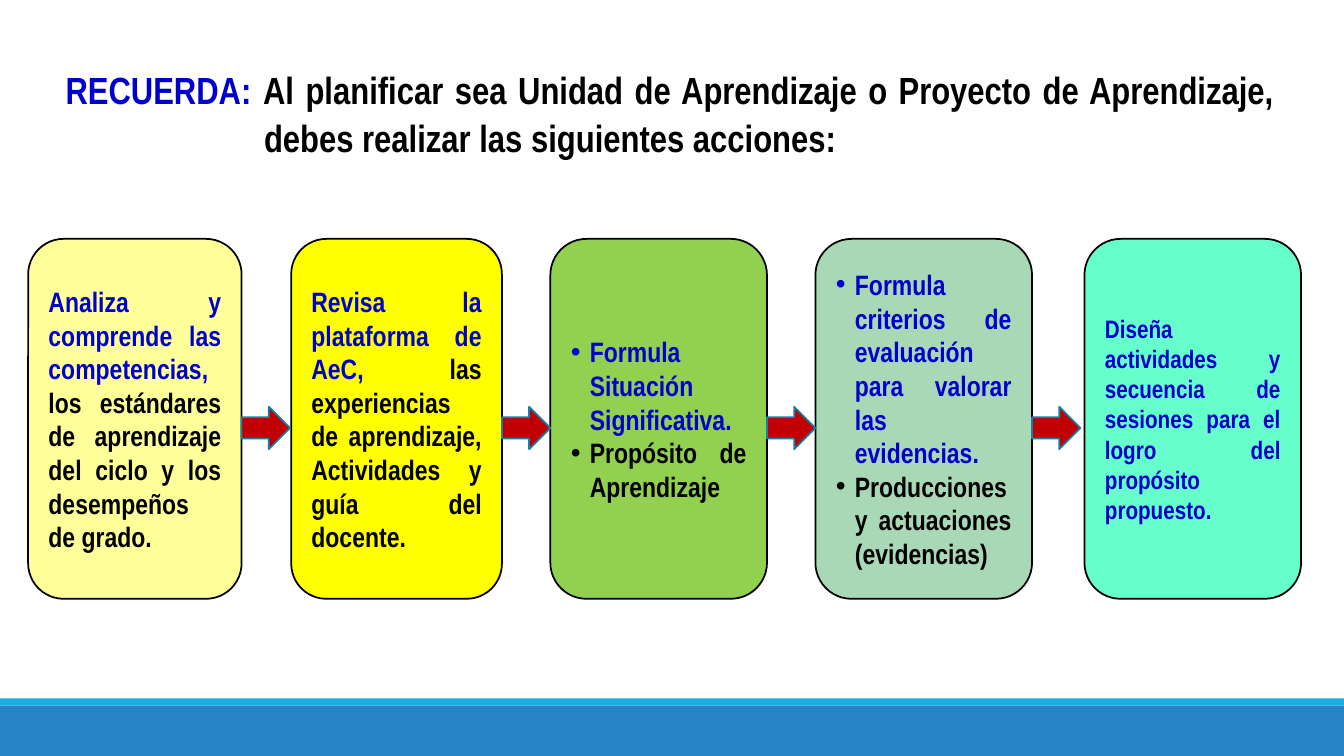
"""Build a slide with the five steps for planning a learning unit or project."""
from lxml import etree
from pptx import Presentation
from pptx.dml.color import RGBColor
from pptx.enum.shapes import MSO_SHAPE
from pptx.enum.text import MSO_ANCHOR, MSO_AUTO_SIZE, PP_ALIGN
from pptx.oxml.ns import qn
from pptx.util import Cm, Pt

RECTANGLE = MSO_SHAPE.RECTANGLE
ROUNDED = MSO_SHAPE.ROUNDED_RECTANGLE
ARROW = MSO_SHAPE.RIGHT_ARROW
TOP, MIDDLE = MSO_ANCHOR.TOP, MSO_ANCHOR.MIDDLE
JUSTIFY = PP_ALIGN.JUSTIFY
NO_AUTOFIT = MSO_AUTO_SIZE.NONE

BLACK = RGBColor(0x00, 0x00, 0x00)
WHITE = RGBColor(0xFF, 0xFF, 0xFF)
BLUE = RGBColor(0x00, 0x00, 0xCC)
RED = RGBColor(0xC0, 0x00, 0x00)
ARROW_EDGE = RGBColor(0x15, 0x80, 0xA9)
FOOTER_BLUE = RGBColor(0x26, 0x83, 0xC6)
FOOTER_CYAN = RGBColor(0x1C, 0xAD, 0xE4)
CREAM = RGBColor(0xFF, 0xFF, 0x99)
YELLOW = RGBColor(0xFF, 0xFF, 0x00)
GREEN = RGBColor(0x92, 0xD0, 0x50)
SAGE = RGBColor(0xA9, 0xD8, 0xB7)
MINT = RGBColor(0x66, 0xFF, 0xCC)

FONT = "Arial Narrow"
SLIDE_WIDTH, SLIDE_HEIGHT = 33.87, 19.05
STEP_TOP, STEP_HEIGHT = 6.02, 9.07
ARROW_TOP, ARROW_WIDTH, ARROW_HEIGHT = 10.25, 1.22, 1.07

TITLE = [
    ("RECUERDA: ", BLUE),
    ("Al planificar sea Unidad de Aprendizaje o Proyecto de Aprendizaje, "
     "debes realizar las siguientes acciones:", BLACK),
]
FOOTER_BARS = [(17.78, 1.27, FOOTER_BLUE), (17.6, 0.18, FOOTER_CYAN)]
STEPS = [
    (0.71, 5.38, CREAM, 20, False, [
        [("Analiza y comprende las competencias,", BLUE),
         (" los estándares de aprendizaje del ciclo y los desempeños de grado.", BLACK)]]),
    (7.34, 5.31, YELLOW, 20, False, [
        [("Revisa la plataforma de AeC, ", BLUE),
         ("las experiencias de aprendizaje, Actividades y guía del docente.", BLACK)]]),
    (13.87, 5.46, GREEN, 20, True, [
        [("Formula Situación Significativa.", BLUE)],
        [("Propósito de Aprendizaje", BLACK)]]),
    (20.55, 5.46, SAGE, 20, True, [
        [("Formula criterios de evaluación para valorar las evidencias.", BLUE)],
        [("Producciones y actuaciones (evidencias)", BLACK)]]),
    (27.33, 5.46, MINT, 18, False, [
        [("Diseña actividades y secuencia de sesiones para el logro "
          "del propósito propuesto.", BLUE)]]),
]


def add_block(page, kind, left, top, width, height, fill, edge=None):
    """Add a filled shape, outlined when an edge colour is given."""
    block = page.shapes.add_shape(kind, Cm(left), Cm(top), Cm(width), Cm(height))
    block.shadow.inherit = False
    block.fill.solid()
    block.fill.fore_color.rgb = fill
    if edge is None:
        block.line.fill.background()
    else:
        block.line.color.rgb = edge
        block.line.width = Pt(1.25)
    return block


def write_paragraph(para, spans, size, indent=0, bullet=False):
    """Fill a justified bold paragraph with coloured spans and a hanging indent."""
    para.alignment = JUSTIFY
    properties = para._p.get_or_add_pPr()
    if indent:
        properties.set("marL", str(Cm(indent)))
        properties.set("indent", str(-Cm(indent)))
    if bullet:
        etree.SubElement(properties, qn("a:buFont")).set("typeface", "Arial")
        etree.SubElement(properties, qn("a:buChar")).set("char", "•")
    para.font.name = FONT
    para.font.size = Pt(size)
    para.font.bold = True
    for text, colour in spans:
        span = para.add_run()
        span.text = text
        span.font.color.rgb = colour


def add_title(page):
    """Place and fill the title placeholder."""
    title = page.shapes.title
    title.left, title.top, title.width, title.height = Cm(1.4), Cm(1.47), Cm(30.96), Cm(2.72)
    title.fill.solid()
    title.fill.fore_color.rgb = WHITE
    frame = title.text_frame
    frame.word_wrap = True
    frame.auto_size = NO_AUTOFIT
    frame.vertical_anchor = TOP
    para = frame.paragraphs[0]
    para.line_spacing = 1.07
    para.space_after = Pt(4)
    write_paragraph(para, TITLE, 27, indent=5)


def add_step(page, left, width, fill, size, bulleted, paragraphs):
    """Add one rounded step box with its text."""
    box = add_block(page, ROUNDED, left, STEP_TOP, width, STEP_HEIGHT, fill, BLACK)
    frame = box.text_frame
    frame.word_wrap = True
    frame.vertical_anchor = MIDDLE
    for number, spans in enumerate(paragraphs):
        para = frame.add_paragraph() if number else frame.paragraphs[0]
        write_paragraph(para, spans, size, 0.48 if bulleted else 0, bulleted)


def main():
    """Compose and save the deck."""
    deck = Presentation()
    deck.slide_width, deck.slide_height = Cm(SLIDE_WIDTH), Cm(SLIDE_HEIGHT)
    page = deck.slides.add_slide(deck.slide_layouts[5])
    for top, height, fill in FOOTER_BARS:
        add_block(page, RECTANGLE, 0, top, SLIDE_WIDTH, height, fill)
    add_title(page)
    for step in STEPS:
        add_step(page, *step)
    for left, width, *_ in STEPS[:-1]:
        add_block(page, ARROW, left + width, ARROW_TOP, ARROW_WIDTH, ARROW_HEIGHT,
                  RED, ARROW_EDGE)
    deck.save("out.pptx")


if __name__ == "__main__":
    main()
